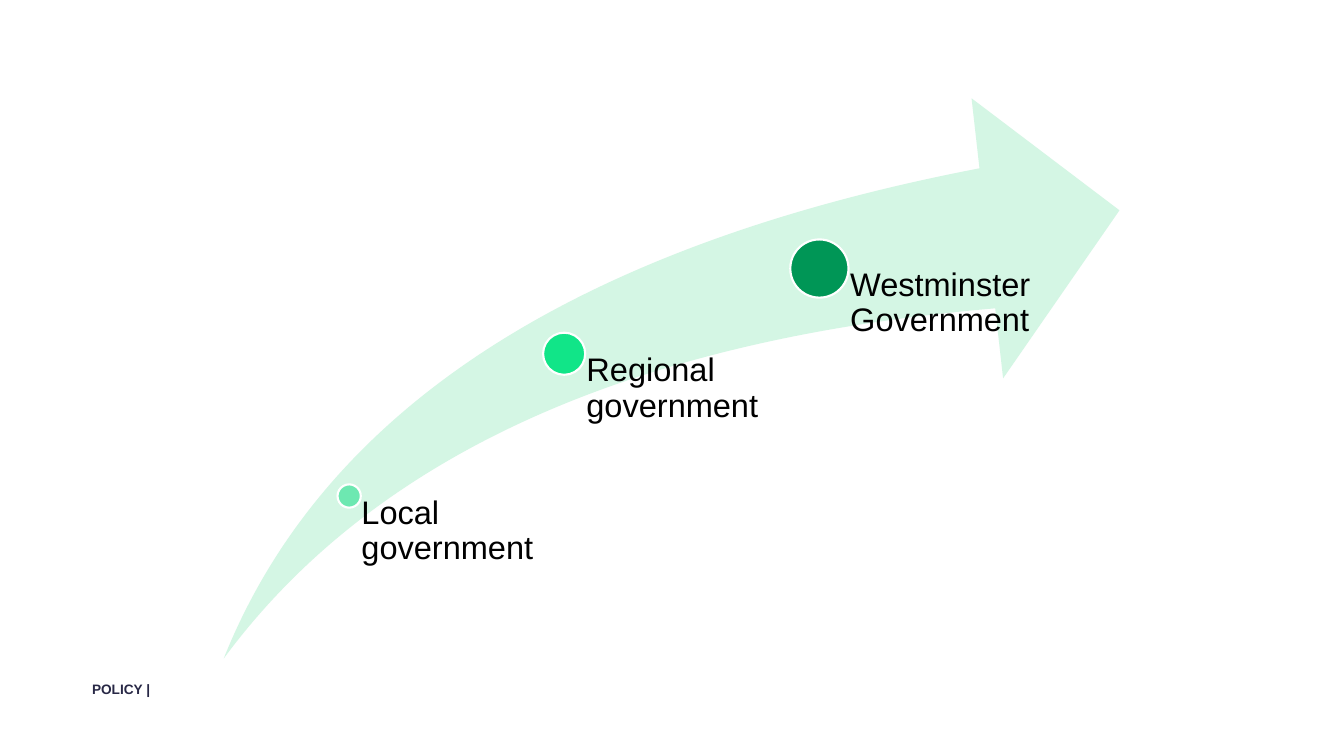
from dataclasses import dataclass

from pptx import Presentation
from pptx.dml.color import RGBColor
from pptx.enum.shapes import MSO_SHAPE as Shape
from pptx.enum.text import MSO_ANCHOR as Anchor
from pptx.util import Inches, Pt


@dataclass(frozen=True)
class Theme:
    font: str = "Arial"
    arrow: str = "D4F6E4"
    outline: str = "FFFFFF"
    text: str = "000000"
    footer: str = "282846"
    label_size: int = 31
    footer_size: int = 13
    outline_width: int = 2


@dataclass(frozen=True)
class Box:
    left: float
    top: float
    width: float
    height: float

    @property
    def lengths(self):
        return [Inches(n) for n in (self.left, self.top, self.width, self.height)]


class GrowthSlide:
    def __init__(self, presentation, theme):
        self.theme = theme
        self.slide = presentation.slides.add_slide(presentation.slide_layouts[6])

    def add_shape(self, kind, box, color, outlined=False):
        shape = self.slide.shapes.add_shape(kind, *box.lengths)
        shape.shadow.inherit = False
        shape.fill.solid()
        shape.fill.fore_color.rgb = RGBColor.from_string(color)
        if outlined:
            shape.line.color.rgb = RGBColor.from_string(self.theme.outline)
            shape.line.width = Pt(self.theme.outline_width)
        else:
            shape.line.fill.background()
        return shape

    def add_text(self, text, box, size, color, insets, bold=False, spacing=1.0):
        frame = self.slide.shapes.add_textbox(*box.lengths).text_frame
        frame.word_wrap = True
        frame.vertical_anchor = Anchor.TOP
        (frame.margin_left, frame.margin_top,
         frame.margin_right, frame.margin_bottom) = map(Inches, insets)
        paragraph = frame.paragraphs[0]
        paragraph.text = text
        paragraph.line_spacing = spacing
        font = paragraph.font
        font.name, font.size, font.bold = self.theme.font, Pt(size), bold
        font.color.rgb = RGBColor.from_string(color)

    def add_arrow(self, box):
        arrow = self.add_shape(Shape.SWOOSH_ARROW, box, self.theme.arrow)
        arrow.adjustments[0] = 0.25
        arrow.adjustments[1] = 0.25

    def add_stage(self, arrow, label, color, x, y, diameter, label_width):
        """Place a dot by shares of the arrow; its label starts at the dot's centre."""
        center_x = arrow.left + x * arrow.width
        center_y = arrow.top + y * arrow.height
        size = diameter * arrow.width
        dot = Box(center_x - size / 2, center_y - size / 2, size, size)
        self.add_shape(Shape.OVAL, dot, color, outlined=True)
        label_box = Box(center_x, center_y, label_width * arrow.width,
                        arrow.top + arrow.height - center_y)
        self.add_text(label, label_box, self.theme.label_size, self.theme.text,
                      (0.53 * size, 0, 0, 0), spacing=0.9)


# Label, dot colour, centre x and y, dot diameter, label width
STAGES = [
    ("Local government", "6DE8B1", 0.14, 0.71, 0.026, 0.233),
    ("Regional government", "11E588", 0.38, 0.456, 0.047, 0.24),
    ("Westminster Government", "009656", 0.665, 0.304, 0.065, 0.24),
]


def main():
    presentation = Presentation()
    presentation.slide_width = Inches(17.78)
    presentation.slide_height = Inches(10)
    theme = Theme()
    page = GrowthSlide(presentation, theme)

    # Footer
    page.add_text("POLICY |", Box(1.12, 8.95, 1.57, 0.32), theme.footer_size,
                  theme.footer, (0.1, 0.05, 0.1, 0.05), bold=True)

    # Rising arrow with its three stages
    arrow = Box(2.96, 1.3, 11.85, 7.41)
    page.add_arrow(arrow)
    for stage in STAGES:
        page.add_stage(arrow, *stage)

    presentation.save("out.pptx")


if __name__ == "__main__":
    main()
